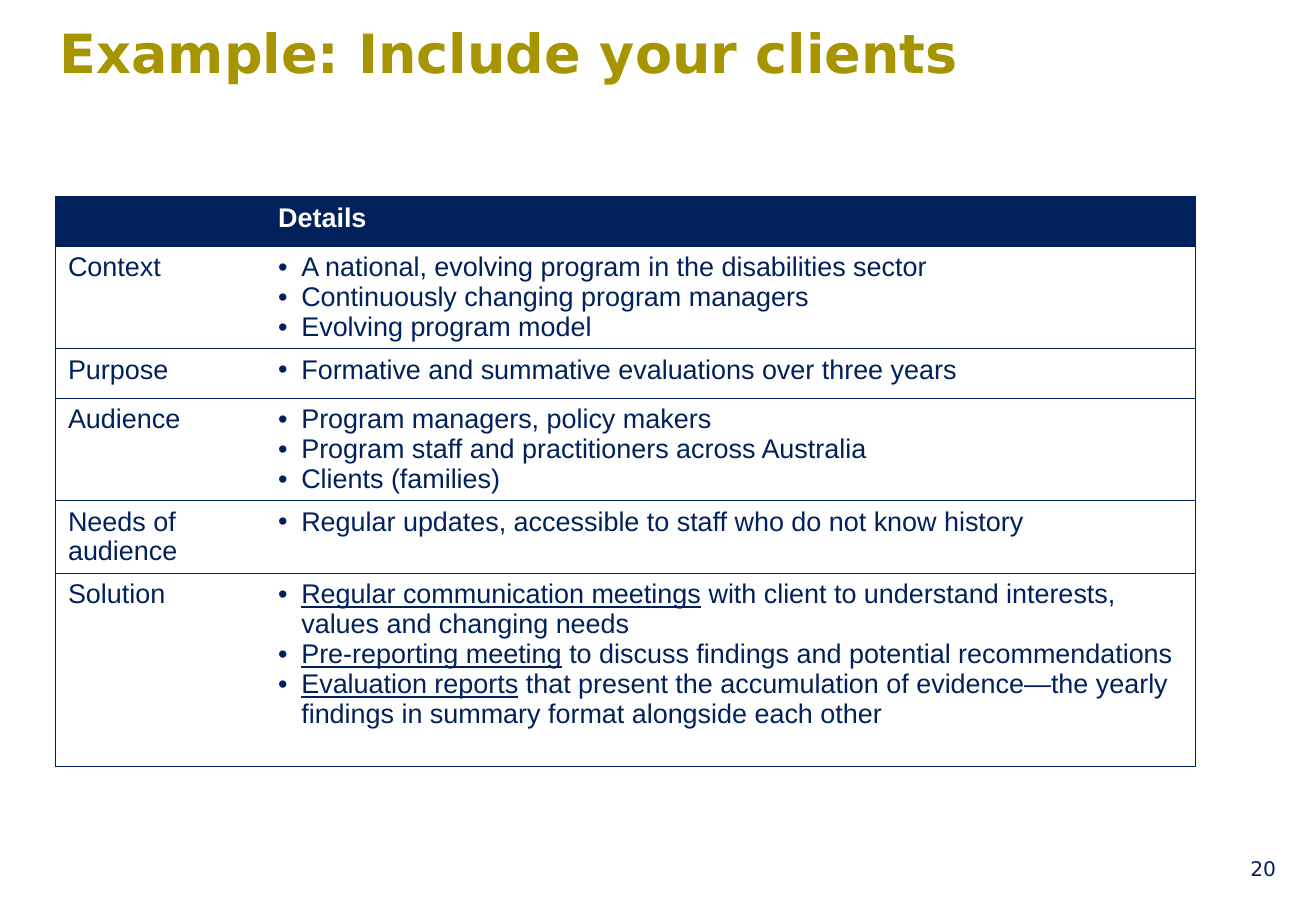
from dataclasses import dataclass

from lxml.etree import SubElement
from pptx import Presentation
from pptx.dml.color import RGBColor as RGB
from pptx.enum.text import MSO_ANCHOR as Anchor, MSO_AUTO_SIZE as AutoSize, PP_ALIGN as Align
from pptx.oxml.ns import qn
from pptx.util import Inches, Pt


@dataclass(frozen=True)
class Theme:
    gold: str = "A69500"
    navy: str = "00215B"
    rule: str = "002059"
    white: str = "FFFFFF"
    heading_font: str = "DejaVu Sans"
    body_font: str = "Arial"
    title_size: float = 32
    body_size: float = 16
    number_size: float = 12
    rule_width: float = 0.75
    bullet_indent: float = 0.19


THEME = Theme()
WIDTH, HEIGHT = 10.83, 7.5
LEFT, CONTENT_WIDTH = 0.46, 9.38
LABEL_SHARE = 1.73 / CONTENT_WIDTH

# Each row: label, height, bullets as (underlined lead, remaining text)
ROWS = [
    ("Context", 0.84, [
        ("", "A national, evolving program in the disabilities sector"),
        ("", "Continuously changing program managers"),
        ("", "Evolving program model")]),
    ("Purpose", 0.41, [
        ("", "Formative and summative evaluations over three years")]),
    ("Audience", 0.84, [
        ("", "Program managers, policy makers"),
        ("", "Program staff and practitioners across Australia"),
        ("", "Clients (families)")]),
    ("Needs of audience", 0.6, [
        ("", "Regular updates, accessible to staff who do not know history")]),
    ("Solution", 1.59, [
        ("Regular communication meetings",
         " with client to understand interests, values and changing needs"),
        ("Pre-reporting meeting",
         " to discuss findings and potential recommendations"),
        ("Evaluation reports",
         " that present the accumulation of evidence—the yearly findings"
         " in summary format alongside each other")]),
]
HEADER_HEIGHT = 0.41


def style(font, face, size, color, bold=False):
    font.name, font.size, font.bold = face, Pt(size), bold
    font.color.rgb = RGB.from_string(color)


def add_title(slide, box, wording):
    title = slide.shapes.title
    title.left, title.top, title.width, title.height = map(Inches, box)
    frame = title.text_frame
    frame.text = wording
    frame.margin_left = frame.margin_right = frame.margin_top = frame.margin_bottom = 0
    frame.vertical_anchor = Anchor.TOP
    frame.word_wrap = True
    frame.auto_size = AutoSize.NONE
    heading = frame.paragraphs[0]
    heading.alignment = Align.LEFT
    style(heading.runs[0].font, THEME.heading_font, THEME.title_size, THEME.gold, True)


def format_cell(cell, outer_side, fill):
    """Rule the top, bottom and outer side, then fill the cell."""
    properties = cell._tc.get_or_add_tcPr()
    for side in ("lnL", "lnR", "lnT", "lnB"):
        line = SubElement(properties, qn(f"a:{side}"), w=str(Pt(THEME.rule_width)))
        if side in (outer_side, "lnT", "lnB"):
            solid = SubElement(line, qn("a:solidFill"))
            SubElement(solid, qn("a:srgbClr"), val=THEME.rule)
        else:
            SubElement(line, qn("a:noFill"))
    cell.fill.solid()
    cell.fill.fore_color.rgb = RGB.from_string(fill)


def write_label(cell, wording, color, bold=False):
    cell.text_frame.text = wording
    style(cell.text_frame.paragraphs[0].font, THEME.body_font, THEME.body_size, color, bold)
    for run in cell.text_frame.paragraphs[0].runs:
        style(run.font, THEME.body_font, THEME.body_size, color, bold)


def write_bullets(cell, bullets):
    frame = cell.text_frame
    for index, (lead, rest) in enumerate(bullets):
        point = frame.add_paragraph() if index else frame.paragraphs[0]
        properties = point._p.get_or_add_pPr()
        indent = Inches(THEME.bullet_indent)
        properties.set("marL", str(indent))
        properties.set("indent", str(-indent))
        SubElement(properties, qn("a:buFont"), typeface=THEME.body_font)
        SubElement(properties, qn("a:buChar"), char="•")
        for wording, underlined in ((lead, True), (rest, False)):
            if wording:
                run = point.add_run()
                run.text = wording
                style(run.font, THEME.body_font, THEME.body_size, THEME.navy)
                run.font.underline = underlined


def add_details_table(slide, box):
    left, top, width, height = box
    details = slide.shapes.add_table(len(ROWS) + 1, 2, *map(Inches, box)).table
    details.horz_banding = False
    for column, share in zip(details.columns, (LABEL_SHARE, 1 - LABEL_SHARE)):
        column.width = Inches(width * share)
    heights = [HEADER_HEIGHT] + [row_height for _, row_height, _ in ROWS]
    for index, row_height in enumerate(heights):
        details.rows[index].height = Inches(row_height)
        for column, outer_side in enumerate(("lnL", "lnR")):
            format_cell(details.cell(index, column), outer_side,
                        THEME.white if index else THEME.navy)

    # Header, then one labelled row per topic
    write_label(details.cell(0, 1), "Details", THEME.white, True)
    for index, (label, _, bullets) in enumerate(ROWS, 1):
        write_label(details.cell(index, 0), label, THEME.navy)
        write_bullets(details.cell(index, 1), bullets)


def add_page_number(slide, box, number):
    frame = slide.shapes.add_textbox(*map(Inches, box)).text_frame
    frame.text = number
    frame.word_wrap = True
    frame.vertical_anchor = Anchor.MIDDLE
    frame.paragraphs[0].alignment = Align.RIGHT
    style(frame.paragraphs[0].runs[0].font, THEME.heading_font, THEME.number_size, THEME.navy)


def main():
    deck = Presentation()
    deck.slide_width, deck.slide_height = Inches(WIDTH), Inches(HEIGHT)
    slide = deck.slides.add_slide(deck.slide_layouts[5])
    add_title(slide, (0.49, 0.16, CONTENT_WIDTH, 1.01), "Example: Include your clients")
    table_height = HEADER_HEIGHT + sum(row_height for _, row_height, _ in ROWS)
    add_details_table(slide, (LEFT, 1.62, CONTENT_WIDTH, table_height))
    add_page_number(slide, (8.07, 6.95, 2.53, 0.4), "20")
    deck.save("out.pptx")


if __name__ == "__main__":
    main()
